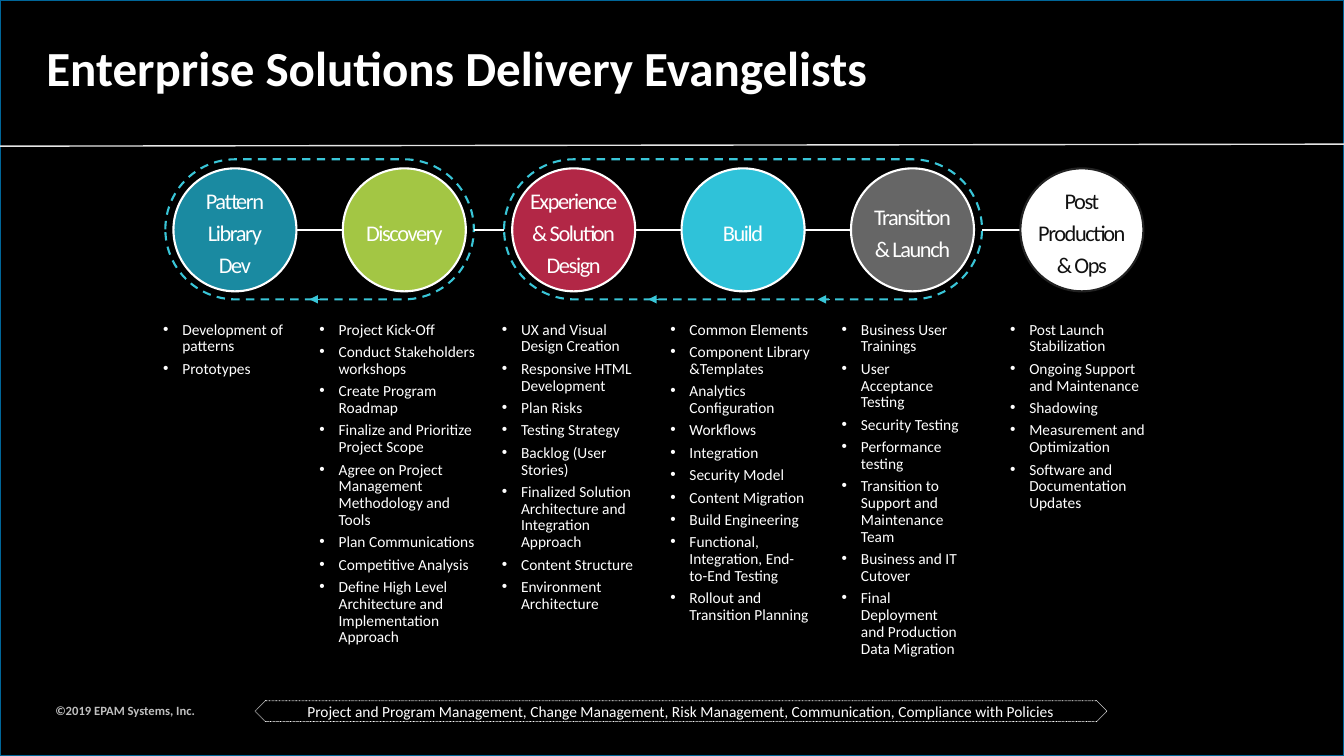
from dataclasses import dataclass

from lxml.etree import SubElement
from pptx import Presentation
from pptx.dml.color import RGBColor
from pptx.enum.dml import MSO_LINE_DASH_STYLE as Dash
from pptx.enum.shapes import MSO_CONNECTOR as Connector, MSO_SHAPE as Shape
from pptx.enum.text import MSO_ANCHOR as Anchor, MSO_AUTO_SIZE as AutoSize, PP_ALIGN as Align
from pptx.oxml.ns import qn
from pptx.util import Inches, Pt


@dataclass(frozen=True)
class Theme:
    font: str = "Calibri"
    black: str = "000000"
    white: str = "FFFFFF"
    dark: str = "111111"
    outline: str = "222222"
    border: str = "006699"
    rule: str = "E6E6E6"
    muted: str = "BFBFBF"
    loop: str = "39C5D7"
    title_size: float = 35
    stage_size: float = 16
    list_size: float = 11
    footer_size: float = 9


THEME = Theme()

# Stage circles and the dashed loops around them
FIRST_LEFT, PITCH, DIAMETER = 1.72, 1.68, 1.22
STAGE_TOP, STAGE_MIDDLE = 1.67, 2.28
LOOP_TOP, LOOP_HEIGHT, LOOP_GAP = 1.58, 1.39, 0.08
LOOPS = [(0, 1), (2, 4)]
ARROW_STAGES = [0, 2, 3]
LIST_TOP = 3.14

# Circle lines, fill, line colour, text colour, list left, list width, activities
STAGES = [
    (["Pattern", "Library", "Dev"], "1A8AA1", THEME.white, THEME.white, 1.52, 1.56,
     ["Development of patterns", "Prototypes"]),
    (["Discovery"], "A3C644", THEME.white, THEME.white, 3.07, 1.84,
     ["Project Kick-Off", "Conduct Stakeholders workshops", "Create Program Roadmap",
      "Finalize and Prioritize Project Scope",
      "Agree on Project Management Methodology and Tools", "Plan Communications",
      "Competitive Analysis",
      "Define High Level Architecture and Implementation Approach"]),
    (["Experience", "& Solution", "Design"], "B22746", THEME.white, THEME.white, 4.88, 1.63,
     ["UX and Visual Design Creation", "Responsive HTML Development", "Plan Risks",
      "Testing Strategy", "Backlog (User Stories)",
      "Finalized Solution Architecture and Integration Approach", "Content Structure",
      "Environment Architecture"]),
    (["Build"], "2FC2D9", THEME.white, THEME.white, 6.55, 1.6,
     ["Common Elements", "Component Library &Templates", "Analytics Configuration",
      "Workflows", "Integration", "Security Model", "Content Migration",
      "Build Engineering", "Functional, Integration, End-to-End Testing",
      "Rollout and Transition Planning"]),
    (["Transition", "& Launch"], "666666", THEME.white, THEME.white, 8.25, 1.41,
     ["Business User Trainings", "User Acceptance Testing", "Security Testing",
      "Performance testing", "Transition to Support and Maintenance Team",
      "Business and IT Cutover", "Final Deployment and Production Data Migration"]),
    (["Post", "Production", "& Ops"], "FFFFFF", THEME.outline, THEME.dark, 9.92, 1.56,
     ["Post Launch Stabilization", "Ongoing Support and Maintenance", "Shadowing",
      "Measurement and Optimization", "Software and Documentation Updates"]),
]


def stage_left(index):
    return FIRST_LEFT + index * PITCH


def style(paragraph, size, color, bold=False):
    font = paragraph.font
    font.name, font.size, font.bold = THEME.font, Pt(size), bold
    font.color.rgb = RGBColor.from_string(color)


def add_outline(slide, kind, box, line, width, fill=None, dash=None):
    shape = slide.shapes.add_shape(kind, *map(Inches, box))
    shape.shadow.inherit = False
    if fill:
        shape.fill.solid()
        shape.fill.fore_color.rgb = RGBColor.from_string(fill)
    else:
        shape.fill.background()
    shape.line.color.rgb = RGBColor.from_string(line)
    shape.line.width = Pt(width)
    if dash:
        shape.line.dash_style = dash
    return shape


def add_line(slide, start, end, color, width, arrow=False):
    line = slide.shapes.add_connector(Connector.STRAIGHT, *map(Inches, (*start, *end)))
    line.line.color.rgb = RGBColor.from_string(color)
    line.line.width = Pt(width)
    if arrow:
        SubElement(line.line._get_or_add_ln(), qn("a:headEnd"), type="triangle")
    SubElement(line._element.spPr, qn("a:effectLst"))


def add_stage(slide, index, lines, fill, line, color):
    box = (stage_left(index), STAGE_TOP, DIAMETER, DIAMETER)
    frame = add_outline(slide, Shape.OVAL, box, line, 1.5, fill).text_frame
    frame.margin_left = frame.margin_right = frame.margin_top = frame.margin_bottom = 0
    frame.word_wrap = False
    frame.vertical_anchor = Anchor.MIDDLE
    for number, text in enumerate(lines):
        paragraph = frame.add_paragraph() if number else frame.paragraphs[0]
        paragraph.alignment, paragraph.line_spacing = Align.CENTER, 1.2
        run = paragraph.add_run()
        run.text = text
        run._r.get_or_add_rPr().set("spc", "-100")
        style(paragraph, THEME.stage_size, color)


def add_activities(slide, left, width, activities):
    frame = slide.shapes.add_textbox(*map(Inches, (left, LIST_TOP, width, 3.4))).text_frame
    frame.word_wrap = True
    frame.auto_size = AutoSize.SHAPE_TO_FIT_TEXT
    for number, text in enumerate(activities):
        paragraph = frame.add_paragraph() if number else frame.paragraphs[0]
        paragraph.text = text
        paragraph.line_spacing, paragraph.space_after = Pt(12), Pt(4)
        properties = paragraph._p.get_or_add_pPr()
        properties.set("marL", str(Inches(0.19)))
        properties.set("indent", str(-Inches(0.19)))
        SubElement(properties, qn("a:buFont"), typeface="Arial")
        SubElement(properties, qn("a:buChar"), char="•")
        style(paragraph, THEME.list_size, THEME.white)


def add_title(slide, text):
    title = slide.shapes.title
    title.left, title.top, title.width, title.height = map(Inches, (0.36, 0.39, 12.62, 0.45))
    frame = title.text_frame
    frame.text = text
    frame.auto_size, frame.vertical_anchor = AutoSize.NONE, Anchor.TOP
    paragraph = frame.paragraphs[0]
    paragraph.alignment, paragraph.line_spacing = Align.LEFT, 0.9
    style(paragraph, THEME.title_size, THEME.white, bold=True)


def add_copyright(slide, text):
    frame = slide.shapes.add_textbox(*map(Inches, (0.45, 6.94, 2, 0.33))).text_frame
    frame.word_wrap = True
    paragraph = frame.paragraphs[0]
    paragraph.text, paragraph.line_spacing = text, 0.9
    style(paragraph, THEME.footer_size, THEME.muted, bold=True)


def add_banner(slide, text):
    banner = add_outline(slide, Shape.LEFT_RIGHT_ARROW, (2.53, 6.95, 8.45, 0.21),
                         THEME.white, 0.5, THEME.black, Dash.ROUND_DOT)
    banner.adjustments[0], banner.adjustments[1] = 0.98, 0.5
    frame = banner.text_frame
    frame.vertical_anchor = Anchor.MIDDLE
    paragraph = frame.paragraphs[0]
    paragraph.text, paragraph.alignment = text, Align.CENTER
    style(paragraph, THEME.list_size, THEME.white)


def add_loops(slide):
    for first, last in LOOPS:
        width = (last - first) * PITCH + DIAMETER + 2 * LOOP_GAP
        box = (stage_left(first) - LOOP_GAP, LOOP_TOP, width, LOOP_HEIGHT)
        loop = add_outline(slide, Shape.ROUNDED_RECTANGLE, box, THEME.loop, 1.5, dash=Dash.DASH)
        loop.adjustments[0] = 0.5
    bottom = LOOP_TOP + LOOP_HEIGHT
    for index in ARROW_STAGES:
        tip = stage_left(index) + 1.35
        add_line(slide, (tip, bottom), (tip + 0.12, bottom), THEME.loop, 0.75, arrow=True)


def add_links(slide):
    loop_starts = [first for first, _ in LOOPS]
    loop_ends = [last for _, last in LOOPS]
    for index in range(len(STAGES) - 1):
        start = stage_left(index) + DIAMETER + LOOP_GAP * (index in loop_ends)
        end = stage_left(index + 1) - LOOP_GAP * (index + 1 in loop_starts)
        add_line(slide, (start, STAGE_MIDDLE), (end, STAGE_MIDDLE), THEME.white, 1.5)


def main():
    deck = Presentation()
    deck.slide_width, deck.slide_height = Inches(13.33), Inches(7.5)
    slide = deck.slides.add_slide(deck.slide_layouts[5])

    # Backdrop and heading
    slide.background.fill.solid()
    slide.background.fill.fore_color.rgb = RGBColor.from_string(THEME.black)
    add_outline(slide, Shape.RECTANGLE, (0, 0, 13.33, 7.5), THEME.border, 1)
    add_line(slide, (13.33, 1.43), (0, 1.45), THEME.rule, 1)
    add_title(slide, "Enterprise Solutions Delivery Evangelists")

    # Delivery stages with their activities
    add_loops(slide)
    add_links(slide)
    for index, (lines, fill, line, color, left, width, activities) in enumerate(STAGES):
        add_stage(slide, index, lines, fill, line, color)
        add_activities(slide, left, width, activities)

    # Footer
    add_copyright(slide, "©2019 EPAM Systems, Inc.")
    add_banner(slide, "Project and Program Management, Change Management, Risk Management, "
                      "Communication, Compliance with Policies")
    deck.save("out.pptx")


if __name__ == "__main__":
    main()
